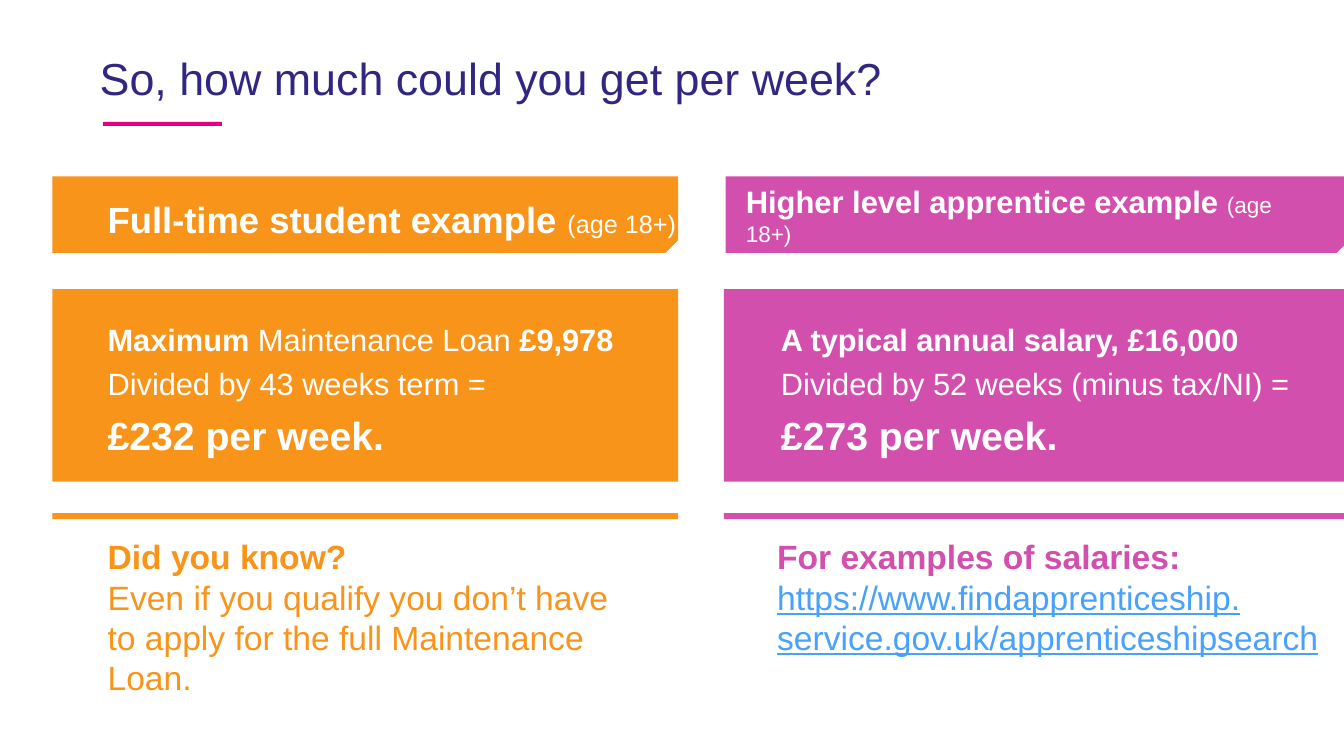
from pptx import Presentation
from pptx import util as u
from pptx.dml.color import RGBColor
from pptx.enum import shapes, text

ORANGE, PINK, WHITE, LINK = "F8941A", "D34FAE", "FFFFFF", "48A1FA"
CARD_WIDTH = 447

deck = Presentation()
deck.slide_width, deck.slide_height = u.Pt(960), u.Pt(540)
page = deck.slides.add_slide(deck.slide_layouts[5])


def add_block(kind, place, color):
    block = page.shapes.add_shape(kind, *map(u.Pt, place))
    block.shadow.inherit = False
    block.fill.solid()
    block.fill.fore_color.rgb = RGBColor.from_string(color)
    block.line.fill.background()
    return block


def add_text(place, paragraphs, color, spacing=1.0, anchor=text.MSO_ANCHOR.MIDDLE):
    box = page.shapes.add_textbox(*map(u.Pt, place))
    frame = box.text_frame
    frame.word_wrap = True
    frame.vertical_anchor = anchor
    for index, spans in enumerate(paragraphs):
        para = frame.add_paragraph() if index else frame.paragraphs[0]
        para.line_spacing = spacing
        para.font.name = "Arial"
        para.font.color.rgb = RGBColor.from_string(color)
        for words, size, bold in spans:
            for number, line in enumerate(words.split("\n")):
                if number:
                    para.add_line_break()
                if line:
                    span = para.add_run()
                    span.text = line
                    span.font.size = u.Pt(size)
                    span.font.bold = bold
    return frame


title = page.shapes.title
title.left, title.top, title.width, title.height = map(u.Pt, (64, 27.4, 896, 51))
title.text_frame.text = "So, how much could you get per week?"
title.text_frame.vertical_anchor = text.MSO_ANCHOR.BOTTOM
heading = title.text_frame.paragraphs[0]
heading.alignment = text.PP_ALIGN.LEFT
heading.line_spacing = 0.9
heading.font.name = "Arial"
heading.font.size = u.Pt(32)
heading.font.color.rgb = RGBColor.from_string("312783")
add_block(shapes.MSO_SHAPE.RECTANGLE, (73.5, 87, 85, 3), "E6007E")

columns = [
    {
        "color": ORANGE, "left": 37.4,
        "header": (37.4, CARD_WIDTH),
        "header_text": (69.8, 126, 447, 54.7), "header_spacing": 1.2,
        "header_words": [("Full-time student example ", 26, True), ("(age 18+)", 18, False)],
        "sum_text": (69.8, 206.6, 409, 137.5),
        "sum_words": [
            [("Maximum", 22, True), (" Maintenance Loan ", 22, False), ("£9,978", 22, True)],
            [("Divided by 43 weeks term =", 22, False)],
            [("£232 per week.", 28, True)],
        ],
        "note_left": 69.8,
        "note_words": [
            ("Did you know? \n", 24, True),
            ("Even if you qualify you don’t have \nto apply for the full Maintenance Loan.", 24, False),
        ],
    },
    {
        "color": PINK, "left": 517,
        "header": (518.4, 445.6),
        "header_text": (525.6, 126, 420, 54.7), "header_spacing": 1.0,
        "header_words": [("Higher level apprentice example ", 22.1, True), ("(age 18+)", 16.1, False)],
        "sum_text": (550.8, 207.4, 413, 136),
        "sum_words": [
            [("A typical annual salary, £16,000", 22, True)],
            [("Divided by 52 weeks (minus tax/NI) =", 22, False)],
            [("£273 per week.", 28, True)],
        ],
        "note_left": 548,
        "note_words": [
            ("For examples of salaries: \n", 24, True),
            ("https://www.findapprenticeship.\nservice.gov.uk/apprenticeshipsearch", 24, False),
        ],
    },
]

for column in columns:
    color, left = column["color"], column["left"]
    add_block(shapes.MSO_SHAPE.RECTANGLE, (left, 206.6, CARD_WIDTH, 137.5), color)
    add_text(column["sum_text"], column["sum_words"], WHITE, 1.2)

    header_left, header_width = column["header"]
    header = add_block(shapes.MSO_SHAPE.SNIP_1_RECTANGLE, (header_left, 126, header_width, 54.7), color)
    header._element.spPr.xfrm.set("flipV", "1")
    add_text(column["header_text"], [column["header_words"]], WHITE, column["header_spacing"])

    add_block(shapes.MSO_SHAPE.RECTANGLE, (left, 366.5, CARD_WIDTH, 4.3), color)
    note = add_text((column["note_left"], 379.4, 414, 94.3), [column["note_words"]], color,
                    anchor=text.MSO_ANCHOR.TOP)
    note.auto_size = text.MSO_AUTO_SIZE.SHAPE_TO_FIT_TEXT

for span in note.paragraphs[0].runs[1:]:
    span.font.color.rgb = RGBColor.from_string(LINK)
    span.font.underline = True

deck.save("out.pptx")
